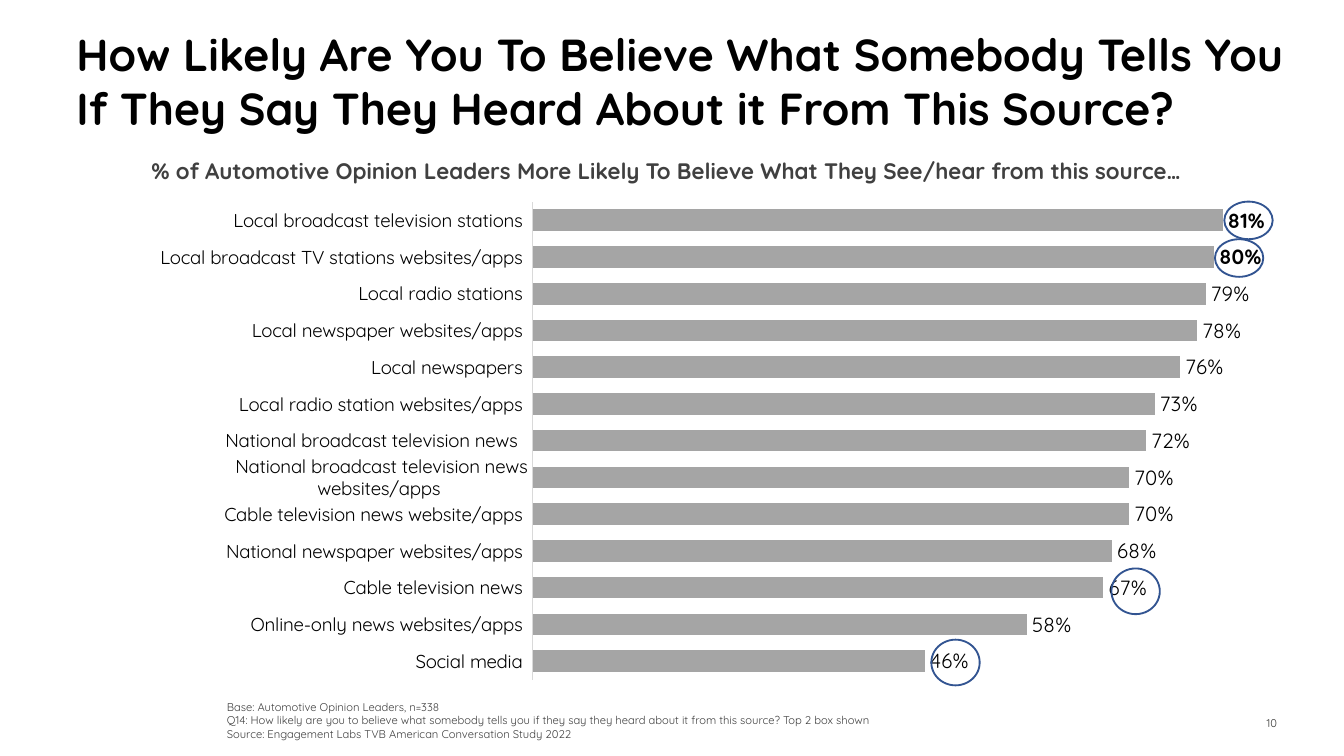
from pptx import Presentation
from pptx.chart.data import CategoryChartData
from pptx.dml.color import RGBColor
from pptx.enum.chart import XL_CHART_TYPE, XL_LABEL_POSITION, XL_TICK_MARK
from pptx.enum.shapes import MSO_SHAPE
from pptx.enum.text import MSO_ANCHOR, PP_ALIGN
from pptx.oxml import parse_xml
from pptx.oxml.ns import nsdecls
from pptx.util import Inches, Pt

FONT = "Quicksand"
BLACK = RGBColor(0x00, 0x00, 0x00)
DARK = RGBColor(0x40, 0x40, 0x40)
PAGE = RGBColor(0x3C, 0x3C, 0x3A)
BAR = RGBColor(0xA5, 0xA5, 0xA5)
AXIS = RGBColor(0xD9, 0xD9, 0xD9)
RING = RGBColor(0x32, 0x54, 0x91)

prs = Presentation()
prs.slide_width = Inches(10)
prs.slide_height = Inches(10) * 9 // 16
s = prs.slides.add_slide(prs.slide_layouts[6])


def set_font(font, size, color=BLACK, bold=False):
    font.name = FONT
    font.size = Pt(size)
    font.bold = bold
    font.color.rgb = color


def add_text(lines, box, size, color=BLACK, bold=False, align=PP_ALIGN.LEFT,
             anchor=MSO_ANCHOR.TOP, wrap=True):
    tf = s.shapes.add_textbox(*[Inches(v) for v in box]).text_frame
    tf.word_wrap = wrap
    tf.vertical_anchor = anchor
    for i, line in enumerate(lines):
        p = tf.paragraphs[0] if i == 0 else tf.add_paragraph()
        p.alignment = align
        r = p.add_run()
        r.text = line
        set_font(r.font, size, color, bold)
    return tf


tf = add_text(["10"], (9.04, 5.22, 0.59, 0.3), 6, PAGE,
              align=PP_ALIGN.RIGHT, anchor=MSO_ANCHOR.MIDDLE)
r = tf.paragraphs[0].add_run()
r.text = " "
set_font(r.font, 8, PAGE)

ratings = [
    ("Local broadcast television stations ", 0.81),
    ("Local broadcast TV stations websites/apps ", 0.80),
    ("Local radio stations ", 0.79),
    ("Local newspaper websites/apps ", 0.78),
    ("Local newspapers ", 0.76),
    ("Local radio station websites/apps ", 0.73),
    ("National broadcast television news  ", 0.72),
    ("National broadcast television news websites/apps ", 0.70),
    ("Cable television news website/apps ", 0.70),
    ("National newspaper websites/apps ", 0.68),
    ("Cable television news ", 0.67),
    ("Online-only news websites/apps ", 0.58),
    ("Social media ", 0.46),
]
data = CategoryChartData(number_format="#,##0%")
data.categories = [name for name, value in ratings]
data.add_series("Series 1", [value for name, value in ratings])
chart = s.shapes.add_chart(XL_CHART_TYPE.BAR_CLUSTERED, Inches(0.98), Inches(1.35),
                           Inches(8.83), Inches(3.83), data).chart
chart.has_legend = False
chart.has_title = False
set_font(chart.font, 10)

cat = chart.category_axis
cat.reverse_order = True
cat.major_tick_mark = XL_TICK_MARK.NONE
cat.format.line.color.rgb = AXIS
cat.format.line.width = Pt(0.75)
set_font(cat.tick_labels.font, 10)

val = chart.value_axis
val.visible = False
val.has_major_gridlines = False
val.minimum_scale, val.maximum_scale = 0, 0.9
val.tick_labels.number_format = "#,##0%"
val.tick_labels.number_format_is_linked = False

plot = chart.plots[0]
plot.gap_width = 70
plot.vary_by_categories = False
series = plot.series[0]
series.format.fill.solid()
series.format.fill.fore_color.rgb = BAR
labels = series.data_labels
labels.show_value = True
labels.number_format = "#,##0%"
labels.number_format_is_linked = False
labels.position = XL_LABEL_POSITION.OUTSIDE_END
set_font(labels.font, 11)
for i in range(2):
    label = series.points[i].data_label
    set_font(label.font, 11, bold=True)
    label.position = XL_LABEL_POSITION.OUTSIDE_END

plot_area = chart.element.chart.plotArea
for old in plot_area.xpath("c:layout"):
    plot_area.remove(old)
plot_area.insert(0, parse_xml(
    f'<c:layout {nsdecls("c")}><c:manualLayout><c:layoutTarget val="inner"/>'
    '<c:xMode val="edge"/><c:yMode val="edge"/><c:x val="0.338"/><c:y val="0.04"/>'
    '<c:w val="0.646"/><c:h val="0.928"/></c:manualLayout></c:layout>'))

add_text(["How Likely Are You To Believe What Somebody Tells You "
          "If They Say They Heard About it From This Source?"],
         (0.47, 0.15, 9.21, 0.9), 24, bold=True)
add_text(["Base: Automotive Opinion Leaders, n=338",
          "Q14: How likely are you to believe what somebody tells you if they say "
          "they heard about it from this source? Top 2 box shown",
          "Source: Engagement Labs TVB American Conversation Study 2022"],
         (1.59, 5.16, 8.1, 0.4), 6, DARK, anchor=MSO_ANCHOR.BOTTOM)
add_text(["% of Automotive Opinion Leaders More Likely To Believe What They "
          "See/hear from this source…"],
         (0.92, 1.12, 8.08, 0.5), 12, DARK, True, PP_ALIGN.CENTER, wrap=False)

for x, y, h in [(9.11, 1.5, 0.28), (6.93, 4.76, 0.34), (8.27, 4.23, 0.34), (9.04, 1.78, 0.28)]:
    ring = s.shapes.add_shape(MSO_SHAPE.OVAL, Inches(x), Inches(y), Inches(0.36), Inches(h))
    ring.shadow.inherit = False
    ring.fill.background()
    ring.line.color.rgb = RING
    ring.line.width = Pt(1)

prs.save("out.pptx")
